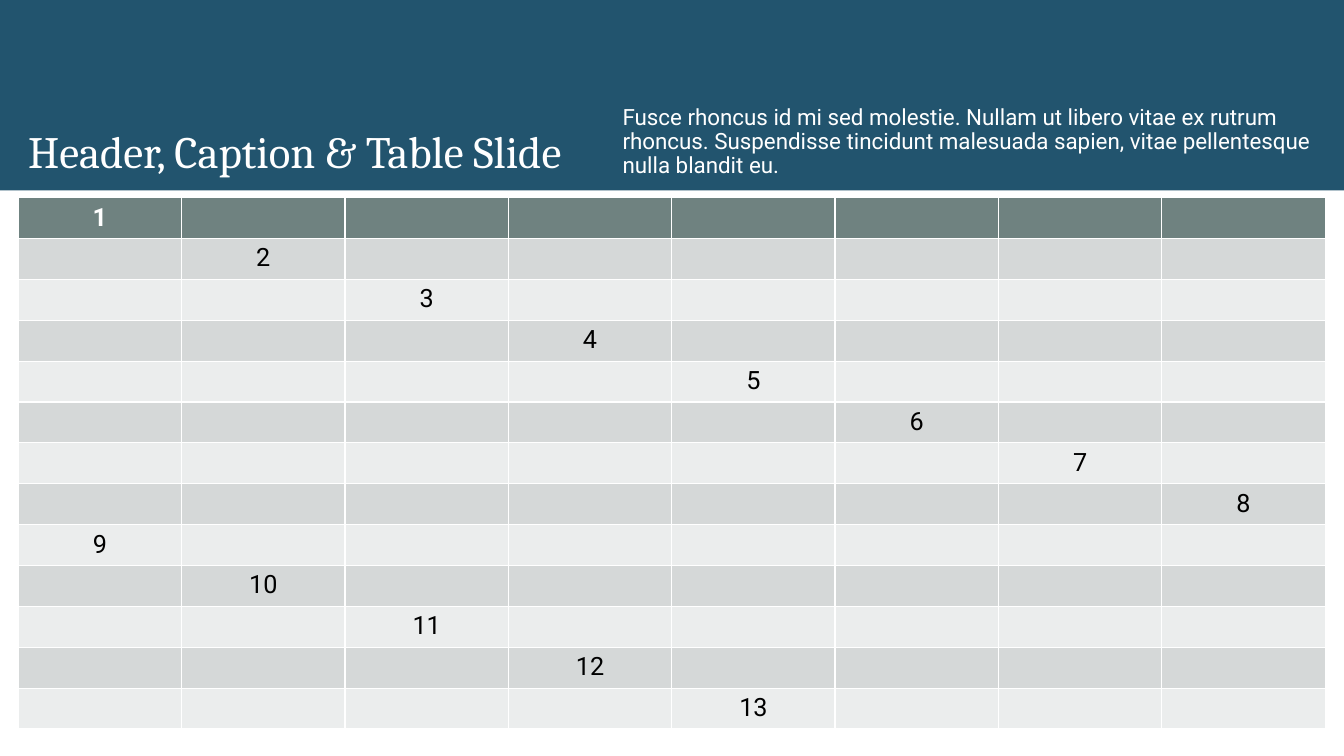
import pptx
import pptx.util
import pptx.dml.color
import pptx.enum.shapes
import pptx.enum.text

Cm = pptx.util.Cm
Pt = pptx.util.Pt


def color(value):
    return pptx.dml.color.RGBColor.from_string(value)


def style(p, name, size, value):
    p.font.name = name
    p.font.size = Pt(size)
    p.font.color.rgb = color(value)


prs = pptx.Presentation()
prs.slide_width = Cm(33.87)
prs.slide_height = Cm(19.05)
s = prs.slides.add_slide(prs.slide_layouts[6])

band = s.shapes.add_shape(
    pptx.enum.shapes.MSO_SHAPE.RECTANGLE, 0, 0, prs.slide_width, Cm(4.8))
band.shadow.inherit = False
band.fill.solid()
band.fill.fore_color.rgb = color("22546E")
band.line.fill.background()

caption = ("Fusce rhoncus id mi sed molestie. Nullam ut libero vitae ex rutrum "
           "rhoncus. Suspendisse tincidunt malesuada sapien, vitae pellentesque "
           "nulla blandit eu.")
for text, left, width, name, size, before in [
    ("Header, Caption & Table Slide", 0.46, 14.83, "Cambria", 32, 0),
    (caption, 15.44, 17.96, "Roboto", 16, 10),
]:
    tf = s.shapes.add_textbox(Cm(left), Cm(0.18), Cm(width), Cm(4.44)).text_frame
    tf.word_wrap = True
    tf.vertical_anchor = pptx.enum.text.MSO_ANCHOR.BOTTOM
    p = tf.paragraphs[0]
    p.text = text
    p.line_spacing = 0.9
    p.space_before = Pt(before)
    style(p, name, size, "FFFFFF")

rows, cols = 13, 8
table = s.shapes.add_table(
    rows, cols, Cm(0.46), Cm(4.98), Cm(32.94), Cm(13.39)).table
for row in range(rows):
    if row == 0:
        fill = "6F8280"
    else:
        fill = "D5D8D8" if row % 2 else "EBEDED"
    for col in range(cols):
        cell = table.cell(row, col)
        cell.fill.solid()
        cell.fill.fore_color.rgb = color(fill)
        p = cell.text_frame.paragraphs[0]
        p.alignment = pptx.enum.text.PP_ALIGN.CENTER
        style(p, "Roboto", 18, "000000" if row else "FFFFFF")
        p.font.bold = row == 0
        if col == row % cols:
            p.text = str(row + 1)

prs.save("out.pptx")
